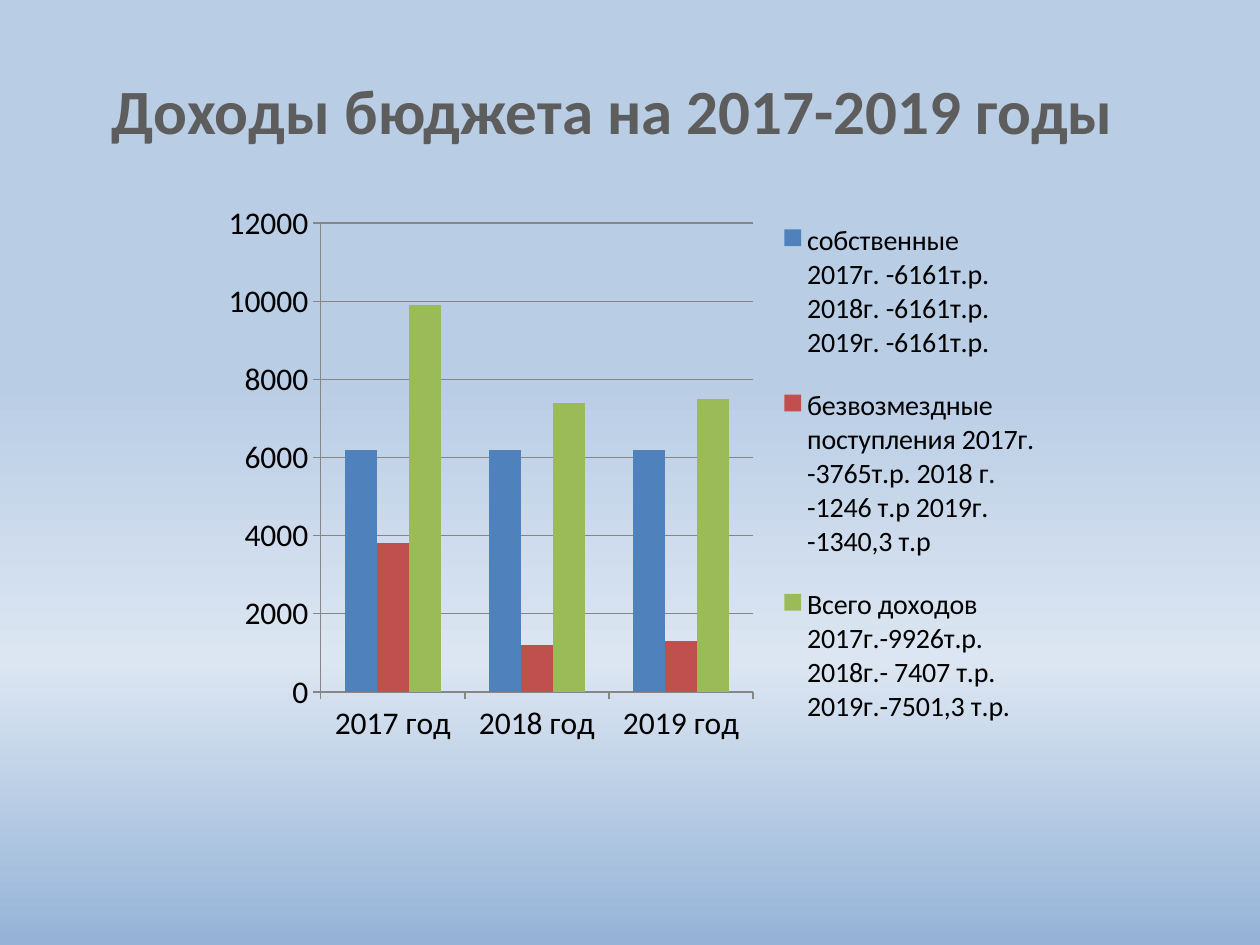
from dataclasses import dataclass

from pptx import Presentation
from pptx.chart.data import CategoryChartData
from pptx.dml.color import RGBColor
from pptx.enum.chart import XL_CHART_TYPE, XL_LEGEND_POSITION, XL_TICK_MARK
from pptx.enum.text import MSO_AUTO_SIZE, PP_ALIGN
from pptx.oxml import parse_xml
from pptx.oxml.ns import nsdecls
from pptx.util import Inches, Pt


@dataclass(frozen=True)
class Theme:
    font: str = "Calibri"
    head: str = "5D5D5D"
    ink: str = "000000"
    rule: str = "868686"
    bars: tuple = ("4F81BD", "C0504D", "9BBB59")
    sky: tuple = ((0, "B9CDE5"), (40, "B9CDE5"), (70, "DCE6F2"), (100, "95B3D7"))
    head_size: int = 36
    axis_size: int = 18
    key_size: int = 16


YEARS = ("2017 год", "2018 год", "2019 год")
INCOME = (
    ("собственные\n2017г. -6161т.р.\n2018г. -6161т.р.\n2019г. -6161т.р.",
     (6200, 6200, 6200)),
    ("безвозмездные\nпоступления 2017г.\n-3765т.р. 2018 г.\n-1246 т.р 2019г.\n-1340,3 т.р",
     (3800, 1200, 1300)),
    ("Всего доходов\n2017г.-9926т.р.\n2018г.- 7407 т.р.\n2019г.-7501,3 т.р.",
     (9900, 7400, 7500)),
)


def style(font, size, color, bold=False):
    font.name = Theme.font
    font.size = Pt(size)
    font.bold = bold
    font.color.rgb = RGBColor.from_string(color)


def write(frame, text, size, color, bold=False, align=PP_ALIGN.LEFT):
    par = frame.paragraphs[0]
    par.alignment = align
    run = par.add_run()
    run.text = text
    style(run.font, size, color, bold)


def place(node, index, inner=False, **box):
    """Fix a chart part at fractions of the chart's size."""
    for old in node.xpath("c:layout"):
        node.remove(old)
    target = '<c:layoutTarget val="inner"/>' if inner else ""
    modes = "".join(f'<c:{key}Mode val="edge"/>' for key in "xy")
    sizes = "".join(f'<c:{key} val="{val}"/>' for key, val in box.items())
    node.insert(index, parse_xml(
        f'<c:layout {nsdecls("c")}><c:manualLayout>{target}{modes}{sizes}'
        "</c:manualLayout></c:layout>"))


class Deck:
    def __init__(self, theme):
        self.theme = theme
        self.file = Presentation()
        self.file.slide_width = Inches(10)
        self.file.slide_height = Inches(7.5)
        self.slide = self.file.slides.add_slide(self.file.slide_layouts[6])

    def sky(self):
        fill = self.slide.background.fill
        fill.gradient()
        fill.gradient_angle = 270
        stops = self.slide.element.xpath(".//p:bg//a:gsLst")[0]
        for old in list(stops):
            stops.remove(old)
        for pos, color in self.theme.sky:
            stops.append(parse_xml(
                f'<a:gs {nsdecls("a")} pos="{pos * 1000}">'
                f'<a:srgbClr val="{color}"/></a:gs>'))

    def title(self, text, *box):
        frame = self.slide.shapes.add_textbox(*map(Inches, box)).text_frame
        frame.word_wrap = False
        frame.auto_size = MSO_AUTO_SIZE.SHAPE_TO_FIT_TEXT
        write(frame, text, self.theme.head_size, self.theme.head,
              bold=True, align=PP_ALIGN.CENTER)

    def chart(self, cats, rows, *box):
        data = CategoryChartData()
        data.categories = cats
        for name, vals in rows:
            data.add_series(name, vals)
        chart = self.slide.shapes.add_chart(
            XL_CHART_TYPE.COLUMN_CLUSTERED, *map(Inches, box), data).chart
        style(chart.font, self.theme.axis_size, self.theme.ink)
        chart.has_title = False

        plot = chart.plots[0]
        plot.vary_by_categories = False
        plot.gap_width = 150
        plot.overlap = 0
        for row, color in zip(plot.series, self.theme.bars):
            row.format.fill.solid()
            row.format.fill.fore_color.rgb = RGBColor.from_string(color)

        self.axes(chart)
        chart.has_legend = True
        key = chart.legend
        key.position = XL_LEGEND_POSITION.RIGHT
        key.include_in_layout = False
        style(key.font, self.theme.key_size, self.theme.ink)
        area = chart.element.xpath(".//c:plotArea")[0]
        place(area, 0, inner=True, x=0.12, y=0.05, w=0.47, h=0.84)
        place(chart.element.xpath(".//c:legend")[0], 1,
              x=0.61, y=0, w=0.3, h=1)

    def axes(self, chart):
        val = chart.value_axis
        val.minimum_scale, val.maximum_scale, val.major_unit = 0, 12000, 2000
        val.has_major_gridlines = True
        lines = [val.major_gridlines.format.line]
        for axis in (chart.category_axis, val):
            axis.major_tick_mark = XL_TICK_MARK.OUTSIDE
            axis.minor_tick_mark = XL_TICK_MARK.NONE
            style(axis.tick_labels.font, self.theme.axis_size, self.theme.ink)
            lines.append(axis.format.line)
        for line in lines:
            line.width = Pt(0.75)
            line.color.rgb = RGBColor.from_string(self.theme.rule)


def main():
    deck = Deck(Theme())
    deck.sky()
    deck.chart(YEARS, INCOME, 1.67, 1.55, 7.3, 4.43)
    deck.title("Доходы бюджета на 2017-2019 годы", 0.76, 0.52, 8.2, 0.71)
    deck.file.save("out.pptx")


if __name__ == "__main__":
    main()
